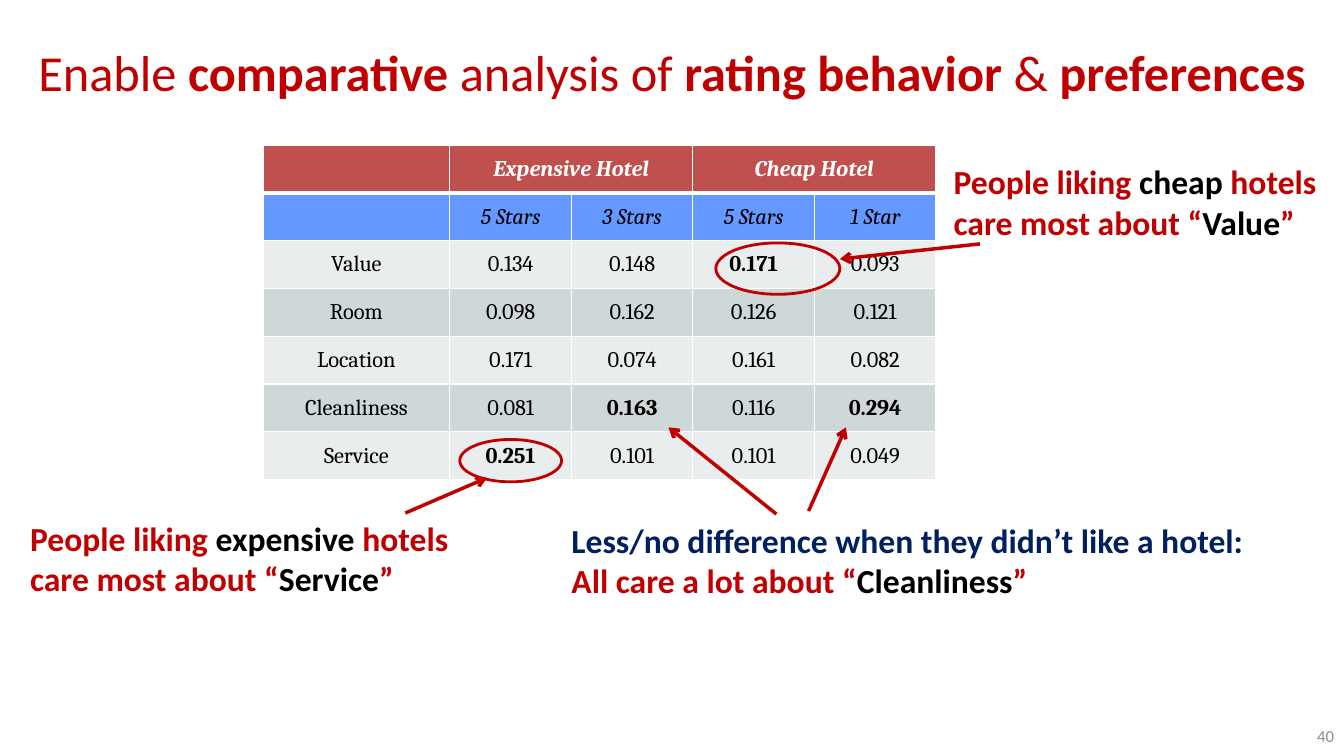
"""Build a slide comparing hotel rating behavior across price ranges."""
from dataclasses import dataclass
from typing import Any

from lxml import etree
from pptx import Presentation
from pptx import util as u
from pptx.dml import color
from pptx.enum import shapes, text
from pptx.oxml import ns

EMU_PER_PX = 9144
COLORS = {
    "red": "C00000", "navy": "002060", "black": "000000", "white": "FFFFFF",
    "gray": "8C8C8C", "header": "C0504D", "subheader": "6699FF",
    "light": "E9EDED", "dark": "CFD8D9",
}
ALIGN, ANCHOR = text.PP_ALIGN, text.MSO_ANCHOR
TITLE_FONT = {"name": "Calibri", "size": u.Pt(36)}
NOTE_FONT = {"name": "Calibri", "size": u.Pt(24), "bold": True}
NUMBER_FONT = {"name": "Calibri", "size": u.Pt(12)}
TABLE_FONT = {"name": "Cambria", "size": u.Pt(16)}


@dataclass(frozen=True)
class Run:
    text: str
    color: str = "red"
    bold: bool | None = None


@dataclass(frozen=True)
class TextBox:
    box: tuple[int, int, int, int]
    lines: list[list[Run]]
    font: dict[str, Any]
    align: Any = ALIGN.LEFT
    anchor: Any = ANCHOR.TOP
    top_inset: int = 5


@dataclass(frozen=True)
class Arrow:
    start: tuple[int, int]
    end: tuple[int, int]


TITLE = TextBox((0, 26, 1333, 150), [[
    Run("Enable "), Run("comparative", bold=True), Run(" analysis of "),
    Run("rating behavior ", bold=True), Run("& "), Run("preferences", bold=True),
]], TITLE_FONT, ALIGN.CENTER, top_inset=15)
EXPENSIVE_NOTE = TextBox((20, 509, 460, 91), [
    [Run("People liking "), Run("expensive", "black"), Run(" hotels")],
    [Run("care most about “"), Run("Service", "black"), Run("”")],
], NOTE_FONT)
CHEAP_NOTE = TextBox((936, 155, 397, 91), [[
    Run("People liking "), Run("cheap", "black"),
    Run(" hotels care most about “"), Run("Value", "black"), Run("”"),
]], NOTE_FONT)
DISLIKE_NOTE = TextBox((557, 511, 700, 91), [
    [Run("Less/no difference when they didn’t like a hotel:", "navy")],
    [Run("All care a lot about “"), Run("Cleanliness", "black"), Run("”")],
], NOTE_FONT)
SLIDE_NUMBER = TextBox((1022, 710, 311, 40), [[Run("40", "gray")]],
                       NUMBER_FONT, ALIGN.RIGHT, ANCHOR.MIDDLE)

SERVICE_RING = (456, 436, 101, 42)
VALUE_RING = (710, 241, 123, 51)
EXPENSIVE_ARROW = Arrow((402, 509), (483, 474))
CHEAP_ARROW = Arrow((972, 242), (833, 257))
DISLIKE_ARROWS = [Arrow((770, 510), (663, 424)), Arrow((802, 507), (839, 424))]

TABLE_BOX = (261, 144, 667, 332)
COLUMN_WIDTHS = [185, 121, 120, 121, 120]
TABLE_ROWS = [
    ["", "Expensive Hotel", "", "Cheap Hotel", ""],
    ["", "5 Stars", "3 Stars", "5 Stars", "1 Star"],
    ["Value", "0.134", "0.148", "0.171", "0.093"],
    ["Room", "0.098", "0.162", "0.126", "0.121"],
    ["Location", "0.171", "0.074", "0.161", "0.082"],
    ["Cleanliness", "0.081", "0.163", "0.116", "0.294"],
    ["Service", "0.251", "0.101", "0.101", "0.049"],
]
BOLD_CELLS = {(2, 3), (5, 2), (5, 4), (6, 1)}


def px(*lengths: int) -> list[u.Emu]:
    return [u.Emu(length * EMU_PER_PX) for length in lengths]


def rgb(name: str) -> color.RGBColor:
    return color.RGBColor.from_string(COLORS[name])


def apply_format(target: Any, values: dict[str, Any]) -> None:
    for name, value in values.items():
        setattr(target, name, value)


def add_runs(paragraph: Any, runs: list[Run], font: dict[str, Any]) -> None:
    for item in runs:
        run = paragraph.add_run()
        run.text = item.text
        apply_format(run.font, font)
        if item.bold is not None:
            run.font.bold = item.bold
        run.font.color.rgb = rgb(item.color)


def add_text(container: Any, item: TextBox) -> None:
    frame = container.add_textbox(*px(*item.box)).text_frame
    apply_format(frame, {"word_wrap": True, "vertical_anchor": item.anchor,
                         "margin_top": px(item.top_inset)[0]})
    for index, runs in enumerate(item.lines):
        paragraph = frame.add_paragraph() if index else frame.paragraphs[0]
        paragraph.alignment = item.align
        add_runs(paragraph, runs, item.font)


def add_ring(container: Any, box: tuple[int, int, int, int]) -> None:
    ring = container.add_shape(shapes.MSO_SHAPE.OVAL, *px(*box))
    ring.shadow.inherit = False
    ring.fill.background()
    ring.line.color.rgb = rgb("red")
    ring.line.width = u.Pt(2)


def add_arrow(container: Any, arrow: Arrow) -> None:
    connector = container.add_connector(
        shapes.MSO_CONNECTOR.STRAIGHT, *px(*arrow.start, *arrow.end))
    connector.line.color.rgb = rgb("red")
    connector.line.width = u.Pt(2.5)
    etree.SubElement(connector.line._get_or_add_ln(), ns.qn("a:tailEnd"), type="arrow")
    etree.SubElement(connector._element.spPr, ns.qn("a:effectLst"))


def add_borders(cell: Any, row: int) -> None:
    widths = {"lnL": 1, "lnR": 1, "lnT": 3 if row == 1 else 1, "lnB": 1 if row else 3}
    properties = cell._tc.get_or_add_tcPr()
    for index, (side, points) in enumerate(widths.items()):
        line = etree.Element(ns.qn(f"a:{side}"), w=str(u.Pt(points)))
        fill = etree.SubElement(line, ns.qn("a:solidFill"))
        etree.SubElement(fill, ns.qn("a:srgbClr"), val=COLORS["white"])
        properties.insert(index, line)


def row_fill(row: int) -> str:
    return ("header", "subheader")[row] if row < 2 else ("light", "dark")[row % 2]


def add_ratings(container: Any) -> None:
    table = container.add_table(
        len(TABLE_ROWS), len(COLUMN_WIDTHS), *px(*TABLE_BOX)).table
    for column, width in zip(table.columns, px(*COLUMN_WIDTHS)):
        column.width = width
    for row, values in enumerate(TABLE_ROWS):
        for column, value in enumerate(values):
            cell = table.cell(row, column)
            cell.vertical_anchor = ANCHOR.MIDDLE
            cell.fill.solid()
            cell.fill.fore_color.rgb = rgb(row_fill(row))
            add_borders(cell, row)
            if value:
                paragraph = cell.text_frame.paragraphs[0]
                paragraph.alignment = ALIGN.CENTER
                bold = row == 0 or (row, column) in BOLD_CELLS
                run = Run(value, "black" if row else "white", bold)
                add_runs(paragraph, [run], TABLE_FONT | {"italic": row < 2})
    for column in (1, 3):
        table.cell(0, column).merge(table.cell(0, column + 1))


def main() -> None:
    presentation = Presentation()
    presentation.slide_width, presentation.slide_height = px(1333, 750)
    slide = presentation.slides.add_slide(presentation.slide_layouts[6])
    canvas = slide.shapes
    add_text(canvas, TITLE)
    add_ratings(canvas)
    add_ring(canvas, SERVICE_RING)
    add_text(canvas, EXPENSIVE_NOTE)
    add_arrow(canvas, EXPENSIVE_ARROW)
    add_text(canvas, CHEAP_NOTE)
    add_ring(canvas, VALUE_RING)
    add_arrow(canvas, CHEAP_ARROW)
    add_text(canvas, SLIDE_NUMBER)
    dislike_group = canvas.add_group_shape().shapes
    add_text(dislike_group, DISLIKE_NOTE)
    for arrow in DISLIKE_ARROWS:
        add_arrow(dislike_group, arrow)
    presentation.save("out.pptx")


if __name__ == "__main__":
    main()
